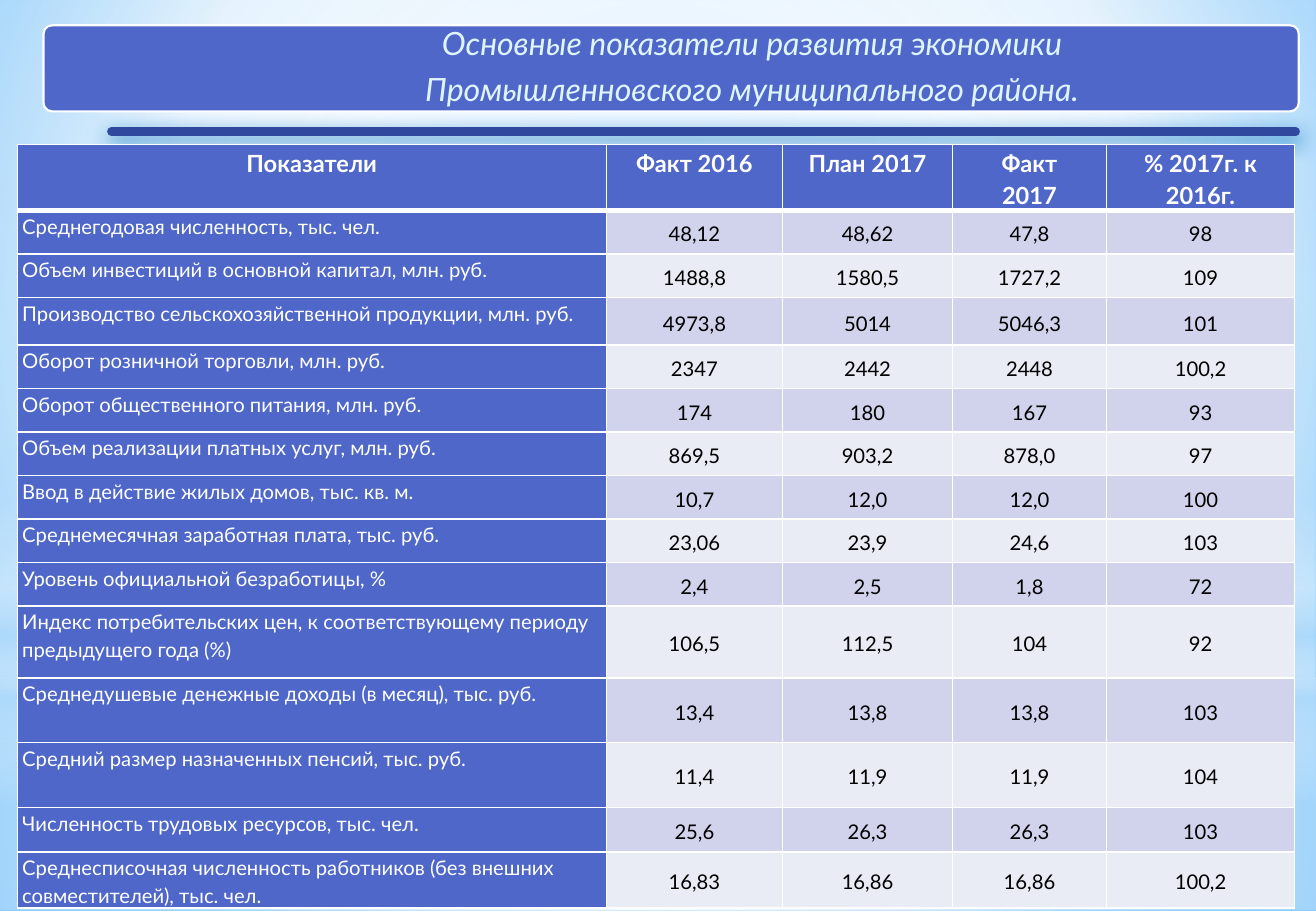
from lxml import etree
from pptx import Presentation
from pptx.dml.color import RGBColor
from pptx.enum.shapes import MSO_CONNECTOR, MSO_SHAPE
from pptx.enum.text import MSO_ANCHOR, PP_ALIGN
from pptx.oxml.ns import qn
from pptx.util import Pt

PX = 7620
FONT = "Lato"
RECT, ROUND, OVAL = MSO_SHAPE.RECTANGLE, MSO_SHAPE.ROUNDED_RECTANGLE, MSO_SHAPE.OVAL
LINE = MSO_CONNECTOR.STRAIGHT
LEFT, CENTER = PP_ALIGN.LEFT, PP_ALIGN.CENTER
TOP, MIDDLE = MSO_ANCHOR.TOP, MSO_ANCHOR.MIDDLE
COLORS = {
    "white": "FFFFFF", "black": "000000", "blue": "4E67C8", "navy": "31489F",
    "title": "DFF5FD", "odd": "D0D3EB", "even": "E9EBF5", "glow": "0070C0",
    "sky": "B4DCFA", "pale": "9ED5FF", "deep": "5BB9FF",
}
MID = (50, 50, 50, 50)
BACK = [(0, "pale", 100), (60, "white", 100), (100, "deep", 100)]
LAYERS = [
    (RECT, (0, 670, 1300, 230), [(0, "white", 91), (37, "white", 76), (100, "sky", 79)], MID),
    (RECT, (0, 0, 1300, 670), [(0, "white", 89), (48, "white", 62), (100, "sky", 79)], MID),
    (RECT, (0, 494, 1300, 300), [(0, "white", 0), (29, "white", 30), (45, "sky", 40),
                                 (55, "white", 26), (65, "sky", 60), (100, "white", 0)], None),
    (OVAL, (0, 210, 1300, 670), [(0, "white", 100), (56, "white", 0)], MID),
]
TITLE = ["Основные показатели развития экономики", "Промышленновского муниципального района."]
WIDTHS = [582, 174, 168, 152, 186]
HEIGHTS = [65, 43, 43, 47, 43, 43, 43, 43, 43, 43, 71, 64, 64, 44, 55]
ROWS = [
    ("Показатели", "Факт 2016", "План 2017", "Факт\n2017", "% 2017г. к 2016г."),
    ("Среднегодовая численность, тыс. чел.", "48,12", "48,62", "47,8", "98"),
    ("Объем инвестиций в основной капитал, млн. руб.", "1488,8", "1580,5", "1727,2", "109"),
    ("Производство сельскохозяйственной продукции, млн. руб.", "4973,8", "5014", "5046,3", "101"),
    ("Оборот розничной торговли, млн. руб.", "2347", "2442", "2448", "100,2"),
    ("Оборот общественного питания, млн. руб.", "174", "180", "167", "93"),
    ("Объем реализации платных услуг, млн. руб.", "869,5", "903,2", "878,0", "97"),
    ("Ввод в действие жилых домов, тыс. кв. м.", "10,7", "12,0", "12,0", "100"),
    ("Среднемесячная заработная плата, тыс. руб.", "23,06", "23,9", "24,6", "103"),
    ("Уровень официальной безработицы, %", "2,4", "2,5", "1,8", "72"),
    ("Индекс потребительских цен, к соответствующему периоду предыдущего года (%)",
     "106,5", "112,5", "104", "92"),
    ("Среднедушевые денежные доходы (в месяц), тыс. руб.", "13,4", "13,8", "13,8", "103"),
    ("Средний размер назначенных пенсий, тыс. руб.", "11,4", "11,9", "11,9", "104"),
    ("Численность трудовых ресурсов, тыс. чел.", "25,6", "26,3", "26,3", "103"),
    ("Среднесписочная численность работников (без внешних совместителей), тыс. чел.",
     "16,83", "16,86", "16,86", "100,2"),
]


def px(*nums):
    """Turn px lengths into EMU."""
    return [num * PX for num in nums]


def rgb(name):
    """Look up a colour by name."""
    return RGBColor.from_string(COLORS[name])


def node(parent, tag, **attrs):
    """Add a drawing element with attributes."""
    return etree.SubElement(parent, qn("a:" + tag), {k: str(v) for k, v in attrs.items()})


def blend(owner, stops, focus):
    """Give a shape or background a gradient, radial when focus is set."""
    grad = owner.find(".//" + qn("a:gradFill"))
    for child in list(grad):
        grad.remove(child)
    items = node(grad, "gsLst")
    for pos, name, alpha in stops:
        stop = node(items, "gs", pos=pos * 1000)
        color = node(stop, "srgbClr", val=COLORS[name])
        node(color, "alpha", val=alpha * 1000)
    if focus:
        radial = node(grad, "path", path="circle")
        node(radial, "fillToRect", **{k: v * 1000 for k, v in zip("ltrb", focus)})
    else:
        node(grad, "lin", ang=5400000, scaled=0)


def write(frame, lines, size, color, align, space, after=0, bold=False, italic=False):
    """Write lines as paragraphs of one run each."""
    frame.word_wrap = True
    for i, line in enumerate(lines):
        para = frame.add_paragraph() if i else frame.paragraphs[0]
        para.alignment, para.line_spacing, para.space_after = align, space, Pt(after)
        run = para.add_run()
        run.text = line
        font = run.font
        font.name, font.size, font.bold, font.italic = FONT, Pt(size), bold, italic
        font.color.rgb = rgb(color)


def add_layer(slide, kind, box, stops, focus):
    """Add a soft gradient layer to the backdrop."""
    shape = slide.shapes.add_shape(kind, *px(*box))
    shape.shadow.inherit = False
    shape.line.fill.background()
    shape.fill.gradient()
    blend(shape.element, stops, focus)


def add_title(slide):
    """Add the banner and its heading."""
    panel = slide.shapes.add_shape(ROUND, *px(43, 25, 1240, 85))
    panel.adjustments[0] = 0.1
    panel.shadow.inherit = False
    panel.fill.solid()
    panel.fill.fore_color.rgb = rgb("blue")
    panel.line.color.rgb = rgb("white")
    panel.line.width = Pt(1.25)
    frame = slide.shapes.add_textbox(*px(299, 25, 983, 85)).text_frame
    frame.margin_left, frame.margin_top, frame.margin_right, frame.margin_bottom = px(0, 10, 95, 10)
    frame.vertical_anchor = MIDDLE
    write(frame, TITLE, 19, "title", CENTER, 0.9, 7, italic=True)


def add_rule(slide):
    """Add the glowing rule under the banner."""
    rule = slide.shapes.add_connector(LINE, *px(110, 130, 1280, 130))
    rule.line.color.rgb = rgb("navy")
    rule.line.width = Pt(5)
    rule.line._get_or_add_ln().set("cap", "rnd")
    effect = node(rule.element.spPr, "effectLst")
    glow = node(effect, "outerShdw", blurRad=Pt(12), dist=Pt(4), dir=5400000,
                algn="ctr", rotWithShape=0)
    node(glow, "srgbClr", val=COLORS["glow"])


def edge(cell, head):
    """Draw white borders, thick below the header."""
    props = cell._tc.get_or_add_tcPr()
    for side in "LRTB":
        width = 3 if head and side == "B" else 1
        line = node(props, "ln" + side, w=Pt(width))
        node(node(line, "solidFill"), "srgbClr", val=COLORS["white"])


def fill_cell(cell, text, row, col):
    """Style and fill one table cell."""
    head, label = row == 0, col == 0
    solid = head or label
    edge(cell, head)
    cell.fill.solid()
    cell.fill.fore_color.rgb = rgb("blue" if solid else "odd" if row % 2 else "even")
    cell.margin_left, cell.margin_top, cell.margin_right, cell.margin_bottom = px(5, 0, 5, 0)
    cell.vertical_anchor = TOP if solid else MIDDLE
    write(cell.text_frame, text.split("\n"), 14 if head else 12, "white" if solid else "black",
          LEFT if label and not head else CENTER, 1.15, bold=head)


def add_grid(slide):
    """Add the table of indicators."""
    box = px(17, 143, sum(WIDTHS), sum(HEIGHTS))
    table = slide.shapes.add_table(len(ROWS), len(WIDTHS), *box).table
    for col, width in zip(table.columns, px(*WIDTHS)):
        col.width = width
    for line, height in zip(table.rows, px(*HEIGHTS)):
        line.height = height
    for r, texts in enumerate(ROWS):
        for c, text in enumerate(texts):
            fill_cell(table.cell(r, c), text, r, c)


def main():
    """Build and save the slide."""
    deck = Presentation()
    deck.slide_width, deck.slide_height = px(1300, 900)
    slide = deck.slides.add_slide(deck.slide_layouts[6])
    slide.background.fill.gradient()
    blend(slide.element, BACK, (20, 10, 20, 60))
    for layer in LAYERS:
        add_layer(slide, *layer)
    add_title(slide)
    add_rule(slide)
    add_grid(slide)
    deck.save("out.pptx")


if __name__ == "__main__":
    main()
